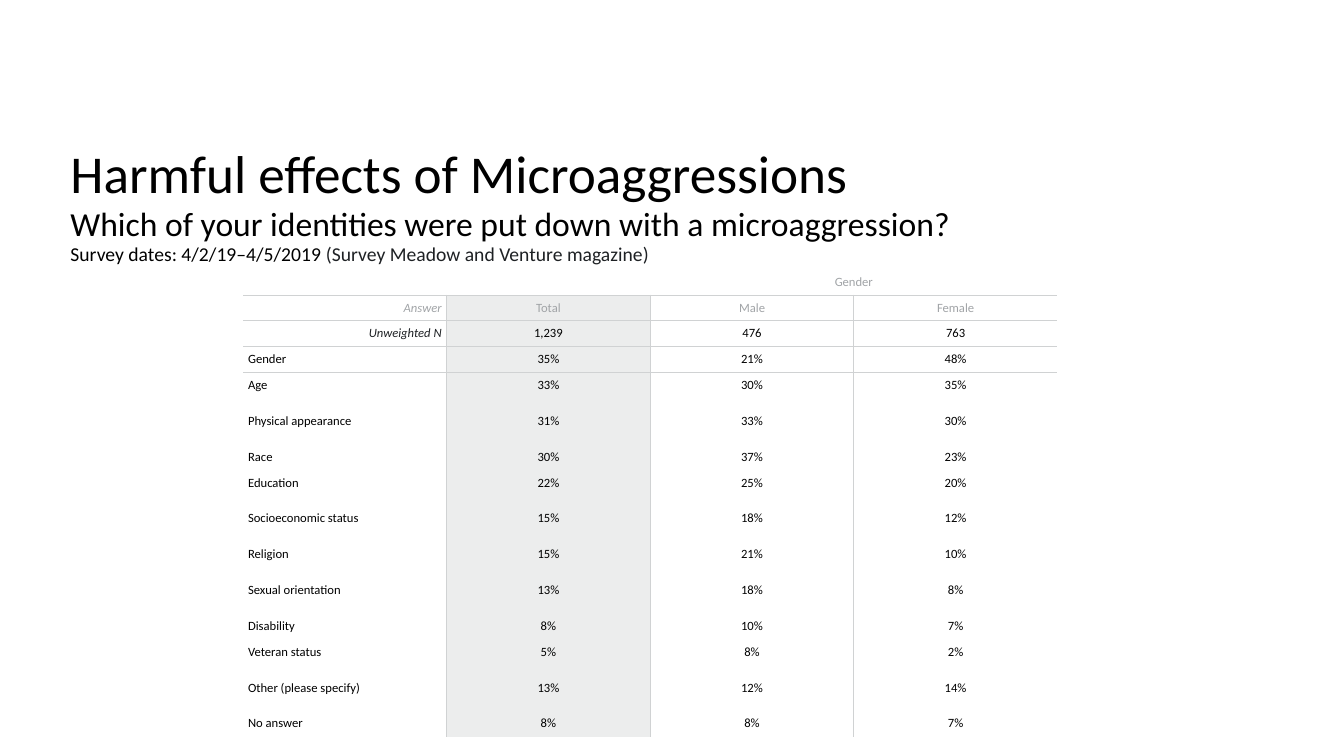
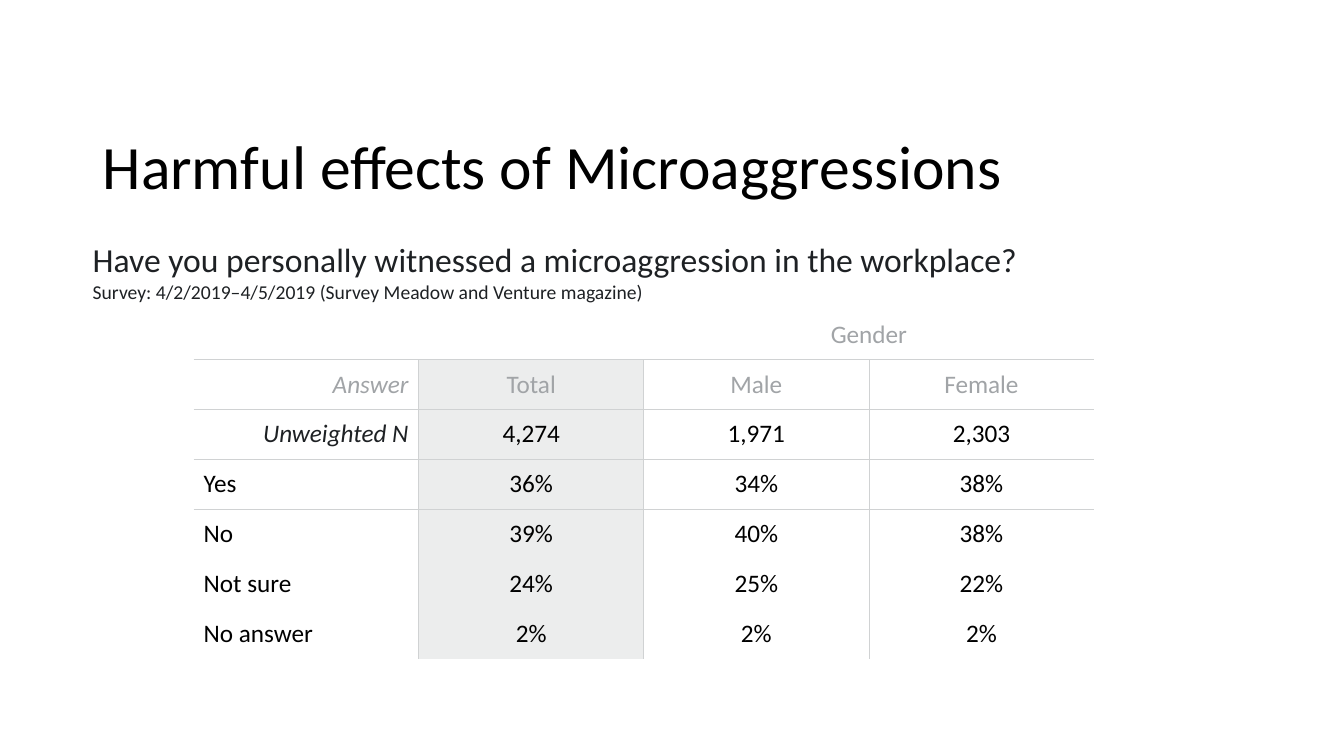
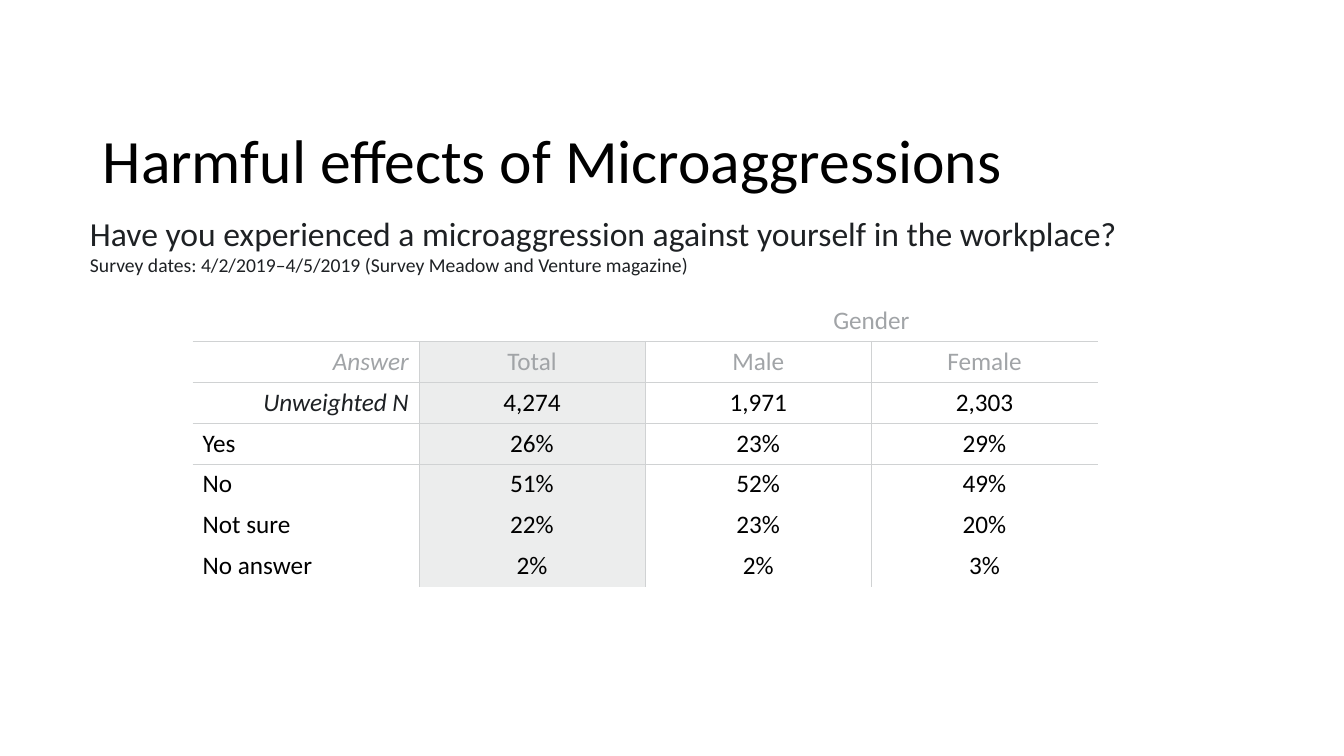
import pptx
import pptx.util
import pptx.dml.color
import pptx.enum.text
import pptx.oxml
import pptx.oxml.ns

INK = {"black": "000000", "dark": "1E2124", "pale": "A1A4A7", "rule": "D0D2D3", "tint": "ECEDED"}
FACE = "Calibri"
TITLE = "Harmful effects of Microaggressions"
SOURCE = "(Survey Meadow and Venture magazine)"
PLAIN = "{2D5ABB26-0587-4C30-8999-92F81FD0307C}"
ALIGN = pptx.enum.text.PP_ALIGN
MID = pptx.enum.text.MSO_ANCHOR.MIDDLE


def color(name):
    return pptx.dml.color.RGBColor.from_string(INK[name])


class Deck:
    """Holds the style and the current slide; boxes are percent shares of the slide."""

    def __init__(self):
        self.show = pptx.Presentation()
        self.show.slide_width = pptx.util.Inches(13.33)
        self.show.slide_height = pptx.util.Inches(7.5)

    def page(self):
        self.slide = self.show.slides.add_slide(self.show.slide_layouts[6])

    def place(self, box):
        wide, high = self.show.slide_width, self.show.slide_height
        return [int(part * full / 100) for part, full in zip(box, (wide, high, wide, high))]

    def font(self, para, size, ink, slant=False):
        para.font.name = FACE
        para.font.size = pptx.util.Pt(size)
        para.font.italic = slant
        para.font.color.rgb = color(ink)

    def text(self, box, paras, pad, space=1.0):
        frame = self.slide.shapes.add_textbox(*self.place(box)).text_frame
        frame.word_wrap = True
        frame.vertical_anchor = MID
        sides = ("margin_left", "margin_top", "margin_right", "margin_bottom")
        for side, inset in zip(sides, pad):
            setattr(frame, side, pptx.util.Inches(inset))
        for i, (size, parts) in enumerate(paras):
            para = frame.add_paragraph() if i else frame.paragraphs[0]
            para.line_spacing = space
            base = parts[0][1]
            self.font(para, size, base)
            for words, ink in parts:
                run = para.add_run()
                run.text = words
                if ink != base:
                    run.font.color.rgb = color(ink)

    def title(self, box):
        self.text(box, [(44, [(TITLE, "black")])], (0.1, 0.05, 0.1, 0.05), 0.9)

    def query(self, box, ask, dates):
        paras = [(24, [(ask, "dark")]), (14, [(f"{dates} {SOURCE}", "dark")])]
        self.text(box, paras, (0, 0.08, 0, 0))

    def edge(self, cell, sides):
        props = cell._tc.get_or_add_tcPr()
        for i, side in enumerate(sides):
            line = pptx.oxml.parse_xml(
                f'<a:ln{side} {pptx.oxml.ns.nsdecls("a")} w="6350"><a:solidFill>'
                f'<a:srgbClr val="{INK["rule"]}"/></a:solidFill></a:ln{side}>')
            props.insert(i, line)

    def cell(self, cell, r, c, words, size, pad):
        cell.vertical_anchor = MID
        cell.margin_left = cell.margin_right = pptx.util.Inches(pad[0])
        cell.margin_top = cell.margin_bottom = pptx.util.Inches(pad[1])
        if r and c == 1:
            cell.fill.solid()
            cell.fill.fore_color.rgb = color("tint")
        else:
            cell.fill.background()
        tests = {"L": r and c, "R": r and c < 3, "T": 0 < r < 4, "B": r < 3}
        self.edge(cell, [side for side, on in tests.items() if on])
        para = cell.text_frame.paragraphs[0]
        if not words:
            para._p.get_or_add_endParaRPr().set("sz", str(size * 100))
            return
        para.text = words
        stub = c == 0
        para.alignment = ALIGN.CENTER if not stub else ALIGN.RIGHT if r < 3 else ALIGN.LEFT
        ink = "pale" if r < 2 else "dark" if stub and r == 2 else "black"
        self.font(para, size, ink, stub and r < 3)

    def table(self, box, count, data, size, pad=(0.1, 0.05), tall=()):
        rows = [("", "", "Gender", ""), ("Answer", "Total", "Male", "Female"),
                ("Unweighted N", *count)]
        rows += [(name, *(f"{n}%" for n in nums)) for name, *nums in data]
        spot = self.place(box)
        shape = self.slide.shapes.add_table(len(rows), 4, *spot)
        shape.element.xpath(".//a:tableStyleId")[0].text = PLAIN
        grid = shape.table
        grid.first_row = grid.horz_banding = False
        share = [1.78 if row[0] in tall else 1 for row in rows]
        for r, row in enumerate(rows):
            grid.rows[r].height = int(spot[3] * share[r] / sum(share))
            for c, words in enumerate(row):
                self.cell(grid.cell(r, c), r, c, words, size, pad)
        for c in (0, 2):
            grid.cell(0, c).merge(grid.cell(0, c + 1))


def main():
    deck = Deck()

    deck.page()
    deck.text((4.5, 5.73, 92.7, 52.93), [
        (38, [(TITLE, "black")]),
        (24, [("Which of your identities were put down with a microaggression?", "black")]),
        (14, [("Survey dates: 4/2/19–4/5/2019 ", "black"), (SOURCE, "dark")]),
    ], (0.1, 0.05, 0.1, 0.8), 0.95)
    deck.table((18.08, 35.6, 60.6, 61.87), ("1,239", "476", "763"), [
        ("Gender", 35, 21, 48),
        ("Age", 33, 30, 35),
        ("Physical appearance", 31, 33, 30),
        ("Race", 30, 37, 23),
        ("Education", 22, 25, 20),
        ("Socioeconomic status", 15, 18, 12),
        ("Religion", 15, 21, 10),
        ("Sexual orientation", 13, 18, 8),
        ("Disability", 8, 10, 7),
        ("Veteran status", 5, 8, 2),
        ("Other (please specify)", 13, 12, 14),
        ("No answer", 8, 8, 7),
    ], 9, (0.05, 0.02), ("Physical appearance", "Socioeconomic status",
                         "Sexual orientation", "Other (please specify)"))

    count = ("4,274", "1,971", "2,303")
    deck.page()
    deck.title((6.9, 6.13, 87.25, 32.53))
    deck.table((14.4, 40.93, 67, 46.27), count, [
        ("Yes", 36, 34, 38),
        ("No", 39, 40, 38),
        ("Not sure", 24, 25, 22),
        ("No answer", 2, 2, 2),
    ], 18)
    deck.query((6.9, 28.13, 84.6, 14.4),
               "Have you personally witnessed a microaggression in the workplace?",
               "Survey: 4/2/2019–4/5/2019")

    deck.page()
    deck.title((6.9, 12.93, 86.25, 17.47))
    deck.table((14.33, 39.73, 67.35, 37.87), count, [
        ("Yes", 26, 23, 29),
        ("No", 51, 52, 49),
        ("Not sure", 22, 23, 20),
        ("No answer", 2, 2, 3),
    ], 18)
    deck.query((6.7, 22.8, 93.3, 18),
               "Have you experienced a microaggression against yourself in the workplace?",
               "Survey dates: 4/2/2019–4/5/2019")

    deck.show.save("out.pptx")


if __name__ == "__main__":
    main()
